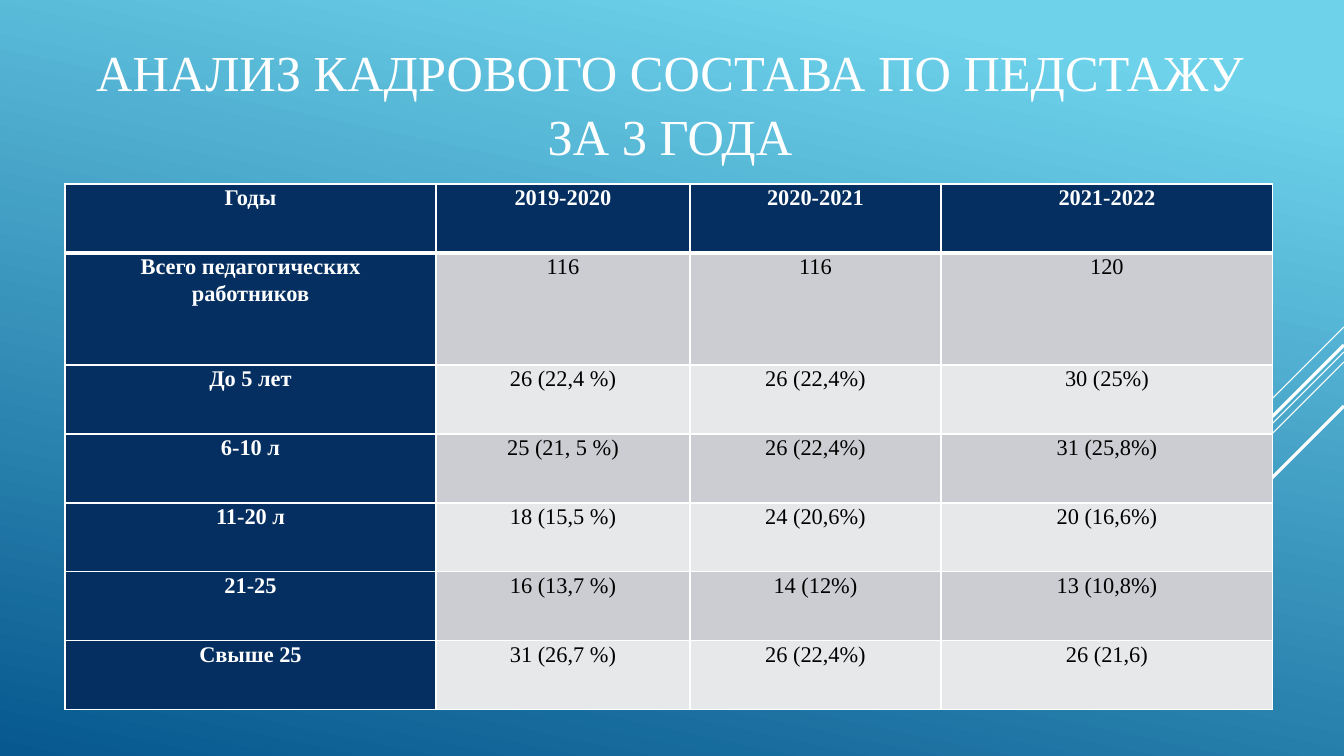
from lxml.etree import SubElement
from pptx import Presentation
from pptx.dml.color import RGBColor
from pptx.enum.shapes import MSO_CONNECTOR
from pptx.enum.text import MSO_ANCHOR, PP_ALIGN
from pptx.oxml.ns import qn
from pptx.util import Pt

PX = 914400 / 100.8
WIDE, HIGH = 1344, 756
WHITE, BLACK, NAVY = "FFFFFF", "000000", "052F61"
BANDS = ["E7E8EA", "CCCDD2"]


def px(*nums):
    """Turn px lengths into a list of EMU."""
    return [round(num * PX) for num in nums]


def write(frame, text, size, color, bold=False, space=1.0):
    """Fill a text frame with centred text, one paragraph per line."""
    frame.word_wrap = True
    for i, line in enumerate(text.split("\n")):
        para = frame.add_paragraph() if i else frame.paragraphs[0]
        para.alignment = PP_ALIGN.CENTER
        para.line_spacing = space
        run = para.add_run()
        run.text = line
        run.font.name = "Times New Roman"
        run.font.size = Pt(size)
        run.font.bold = bold
        run.font.color.rgb = RGBColor.from_string(color)


deck = Presentation()
deck.slide_width, deck.slide_height = px(WIDE, HIGH)
slide = deck.slides.add_slide(deck.slide_layouts[6])

# Background
back = slide.background.fill
back.gradient()
back.gradient_angle = 258
for stop, place, color in zip(back.gradient_stops, [0.1, 1], ["6ED2EB", "06588E"]):
    stop.position = place
    stop.color.rgb = RGBColor.from_string(color)

# Diagonal rays from the right edge: top, run, weight
rays = [(327, 101, 0.75), (352, 329, 0.75), (362, 209, 0.75),
        (345, 192, 2.25), (406, 140, 2.25)]
for top, run, weight in rays:
    ray = slide.shapes.add_connector(
        MSO_CONNECTOR.STRAIGHT, *px(WIDE, top, WIDE - run, top + run))
    ray.line.color.rgb = RGBColor.from_string(WHITE)
    ray.line.width = Pt(weight)
    SubElement(ray._element.spPr, qn("a:effectLst"))

# Title
title = slide.shapes.add_textbox(*px(51, 19, 1238, 166)).text_frame
title.vertical_anchor = MSO_ANCHOR.MIDDLE
write(title, "АНАЛИЗ КАДРОВОГО СОСТАВА ПО ПЕДСТАЖУ ЗА 3 ГОДА", 36, WHITE, space=1.05)

# Staff table
rows = [
    ["Годы", "2019-2020", "2020-2021", "2021-2022"],
    ["Всего педагогических\nработников", "116", "116", "120"],
    ["До 5 лет", "26 (22,4 %)", "26 (22,4%)", "30 (25%)"],
    ["6-10 л", "25 (21, 5 %)", "26 (22,4%)", "31 (25,8%)"],
    ["11-20 л", "18 (15,5 %)", "24 (20,6%)", "20 (16,6%)"],
    ["21-25", "16 (13,7 %)", "14 (12%)", "13 (10,8%)"],
    ["Свыше 25", "31 (26,7 %)", "26 (22,4%)", "26 (21,6)"],
]
widths = [371, 254, 251, 332]
heights = [69, 112] + [69] * 5
table = slide.shapes.add_table(
    len(rows), len(widths), *px(65, 184, sum(widths), sum(heights))).table
for col, width in zip(table.columns, px(*widths)):
    col.width = width
for row, height in zip(table.rows, px(*heights)):
    row.height = height

for r, texts in enumerate(rows):
    for c, text in enumerate(texts):
        cell = table.cell(r, c)
        head = r == 0 or c == 0
        cell.margin_left, cell.margin_right = px(7, 7)
        cell.margin_top = cell.margin_bottom = 0
        write(cell.text_frame, text, 16, WHITE if head else BLACK, head, 1.07)
        props = cell._tc.get_or_add_tcPr()
        for side in "LRTB":
            thick = (r, side) in [(0, "B"), (1, "T")]
            edge = SubElement(props, qn("a:ln" + side), w=str(Pt(3 if thick else 1)))
            SubElement(SubElement(edge, qn("a:solidFill")), qn("a:srgbClr"), val=WHITE)
        cell.fill.solid()
        cell.fill.fore_color.rgb = RGBColor.from_string(NAVY if head else BANDS[r % 2])

deck.save("out.pptx")
